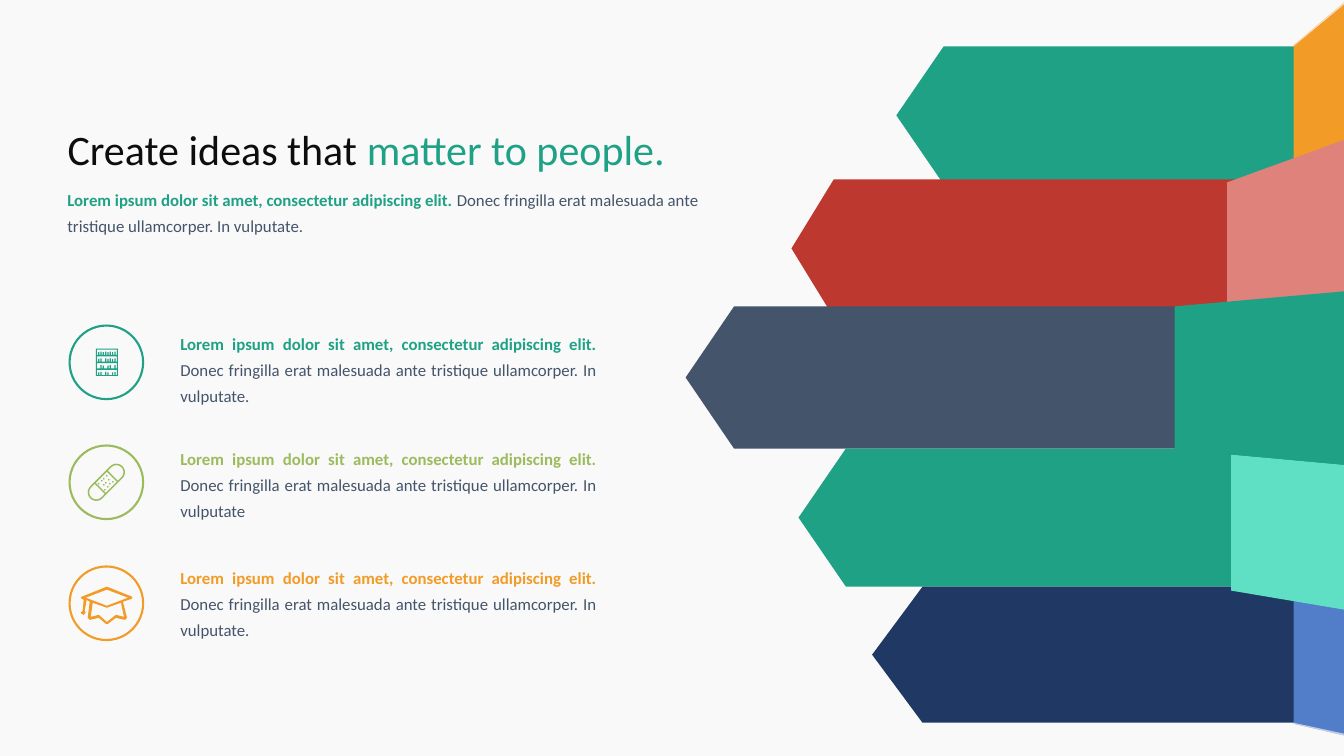
from math import cos, sin, radians, sqrt
from lxml import etree
from pptx import Presentation
from pptx.dml.color import RGBColor
from pptx.enum.shapes import MSO_SHAPE
from pptx.enum.text import MSO_AUTO_SIZE, PP_ALIGN
from pptx.oxml.ns import qn
from pptx.util import Inches, Pt

OVAL = MSO_SHAPE.OVAL
GROW = MSO_AUTO_SIZE.SHAPE_TO_FIT_TEXT
LEFT, JUST = PP_ALIGN.LEFT, PP_ALIGN.JUSTIFY

PAPER = RGBColor(0xF9, 0xF9, 0xF9)
PALE = RGBColor(0xED, 0xED, 0xED)
BLACK = RGBColor(0x0D, 0x0D, 0x0D)
GREEN = RGBColor(0x1F, 0xA1, 0x85)
MINT = RGBColor(0x5F, 0xE0, 0xC4)
RED = RGBColor(0xBD, 0x38, 0x2F)
PINK = RGBColor(0xDE, 0x82, 0x7B)
SLATE = RGBColor(0x44, 0x54, 0x6A)
NAVY = RGBColor(0x1F, 0x38, 0x64)
BLUE = RGBColor(0x51, 0x7D, 0xC9)
LIME = RGBColor(0x9C, 0xBB, 0x5D)
ORANGE = RGBColor(0xF2, 0x9B, 0x27)

LEAD = "Lorem ipsum dolor sit amet, consectetur adipiscing elit. "
REST = "Donec fringilla erat malesuada ante tristique ullamcorper. In vulputate"

prs = Presentation()
prs.slide_width, prs.slide_height = Inches(13.33), Inches(7.5)
slide = prs.slides.add_slide(prs.slide_layouts[6])
slide.background.fill.solid()
slide.background.fill.fore_color.rgb = PAPER
shapes = slide.shapes


def draw(parent, color, *rings):
    pen = None
    for ring in rings:
        pts = [(Inches(x), Inches(y)) for x, y in ring]
        pen = pen.move_to(*pts[0]) if pen else parent.build_freeform(*pts[0])
        pen.add_line_segments(pts[1:], close=True)
    shape = pen.convert_to_shape()
    shape.shadow.inherit = False
    shape.fill.solid()
    shape.fill.fore_color.rgb = color
    shape.line.fill.background()
    return shape


def write(*runs, at, size=12, bold=False, align=LEFT, space=1.3, inset=None):
    box = shapes.add_textbox(*[Inches(n) for n in at])
    frame = box.text_frame
    frame.word_wrap = True
    frame.auto_size = GROW
    if inset is not None:
        frame.margin_left = frame.margin_right = Inches(inset)
        frame.margin_top = frame.margin_bottom = Inches(inset)
    para = frame.paragraphs[0]
    para.alignment = align
    para.line_spacing = space
    for i, (text, color) in enumerate(runs):
        run = para.add_run()
        run.text = text
        run.font.name = "Calibri"
        run.font.size = Pt(size)
        run.font.bold = bold and i == 0
        run.font.color.rgb = color


signs = shapes.add_group_shape().shapes
for tip, neck, right, top, foot, color in [
    (8.89, 9.36, 12.89, 0.46, 1.83, GREEN),
    (7.85, 8.27, 13.42, 1.78, 3.15, RED),
    (6.8, 7.28, 13.22, 3.04, 4.45, SLATE),
    (7.92, 8.39, 14.15, 4.45, 5.82, GREEN),
    (8.65, 9.15, 12.89, 5.82, 7.17, NAVY),
]:
    draw(signs, color, [(neck, foot), (right, foot), (right, top),
                        (neck, top), (tip, (top + foot) / 2)])

for x1, top1, foot1, x2, top2, foot2, color in [
    (12.83, 5.35, 7.18, 14.21, 5.16, 7.5, BLUE),
    (12.21, 4.51, 5.86, 14.05, 4.68, 6.17, MINT),
    (12.83, 0.45, 2.14, 13.36, 0, 2.33, ORANGE),
    (12.17, 1.81, 3.09, 13.49, 1.33, 3.26, PINK),
    (11.65, 3.04, 4.46, 13.79, 2.85, 4.65, GREEN),
]:
    draw(signs, color, [(x1, top1), (x2, top2), (x2, foot2), (x1, foot1)])

for color, ring in [
    (PALE, [(14.8, 7.05), (14.27, 7.5), (14.21, 7.5), (12.83, 7.18), (12.83, 7.17),
            (14.21, 7.47), (14.27, 7.47), (14.8, 7.04)]),
    (PAPER, [(12.83, 0.45), (13.36, 0), (13.42, 0), (14.8, 0.31), (14.8, 0.33),
             (13.42, 0.02), (13.36, 0.02), (12.83, 0.46)]),
]:
    edge = draw(signs, color, ring)
    tint = edge.fill._xPr.find(qn("a:solidFill"))[0]
    etree.SubElement(tint, qn("a:alpha")).set("val", "70000")

for top, text_top, color, end in [
    (3.23, 3.2, GREEN, "."), (4.42, 4.34, LIME, ""), (5.62, 5.52, ORANGE, "."),
]:
    ring = shapes.add_shape(OVAL, Inches(0.69), Inches(top), Inches(0.73), Inches(0.73))
    ring.shadow.inherit = False
    ring.fill.background()
    ring.line.color.rgb = color
    ring.line.width = Pt(1.5)
    write((LEAD, color), (REST + end, SLATE), at=(1.69, text_top, 4.33, 0.89),
          bold=True, align=JUST)

shelf = [[(0.95, 3.46), (1.17, 3.46), (1.17, 3.73), (0.95, 3.73)]]
for row, books in enumerate(["11111111", "11011111", "01101101", "11011011"]):
    top = 3.47 + row * 0.067
    foot = top + 0.052
    hole = [(1.16, top), (0.96, top), (0.96, foot)]
    for col, book in enumerate(books):
        if book == "1":
            x = 0.973 + col * 0.023
            peak = top + (0.018 if col % 2 else 0.024)
            hole += [(x, foot), (x, peak), (x + 0.012, peak), (x + 0.012, foot)]
    shelf.append(hole + [(1.16, foot)])
draw(shapes, GREEN, *shelf)

outer, inner = [], []
for mid, reach, width in [(0.141, 0.085, outer), (0.141, 0.07, inner)]:
    for deg in range(-90, 91, 15):
        width.append((mid + reach * cos(radians(deg)), reach * sin(radians(deg))))
cap = [(0.092, -0.07)] + inner + [(0.092, 0.07)]
strip = [
    outer + [(-u, -v) for u, v in outer],
    cap,
    [(-u, -v) for u, v in cap],
    [(-0.078, -0.07), (0.078, -0.07), (0.078, 0.07), (-0.078, 0.07)],
]
aid = [[(1.055 + (u + v) / sqrt(2), 4.785 + (v - u) / sqrt(2)) for u, v in part]
       for part in strip]
for x, y in [(1.07, 4.83), (1.12, 4.78), (1.06, 4.72), (1.09, 4.8), (1.08, 4.76),
             (1.05, 4.79), (1.04, 4.86), (1.03, 4.75), (0.98, 4.8), (1.01, 4.77),
             (1.03, 4.81)]:
    aid.append([(x + 0.008 * cos(radians(d)), y + 0.008 * sin(radians(d)))
                for d in range(0, 360, 45)])
draw(shapes, LIME, *aid)

draw(
    shapes, ORANGE,
    [(1.06, 5.82), (1.31, 5.92), (1.31, 5.94), (1.22, 5.97), (1.26, 6.13), (1.24, 6.15),
     (1.15, 6.13), (1.07, 6.19), (1.05, 6.19), (0.98, 6.13), (0.89, 6.15), (0.87, 6.13),
     (0.89, 5.97), (0.86, 5.95), (0.84, 6.06), (0.85, 6.08), (0.83, 6.1), (0.81, 6.09),
     (0.8, 6.08), (0.82, 6.06), (0.83, 5.95), (0.81, 5.94), (0.8, 5.93), (0.81, 5.92)],
    [(1.06, 6.01), (0.85, 5.93), (1.06, 5.85), (1.27, 5.93)],
    [(1.23, 6.12), (1.15, 6.1), (1.06, 6.17), (0.98, 6.1), (0.9, 6.12), (0.92, 5.98),
     (1.06, 6.03), (1.2, 5.98)],
)

write(("Create ideas that ", BLACK), ("matter to people.", GREEN),
      at=(0.67, 1.23, 6.53, 0.5), size=30, space=1.0, inset=0)
write((LEAD, GREEN), (REST + ".", SLATE), at=(0.57, 1.77, 6.65, 0.6), bold=True)

prs.save("out.pptx")
